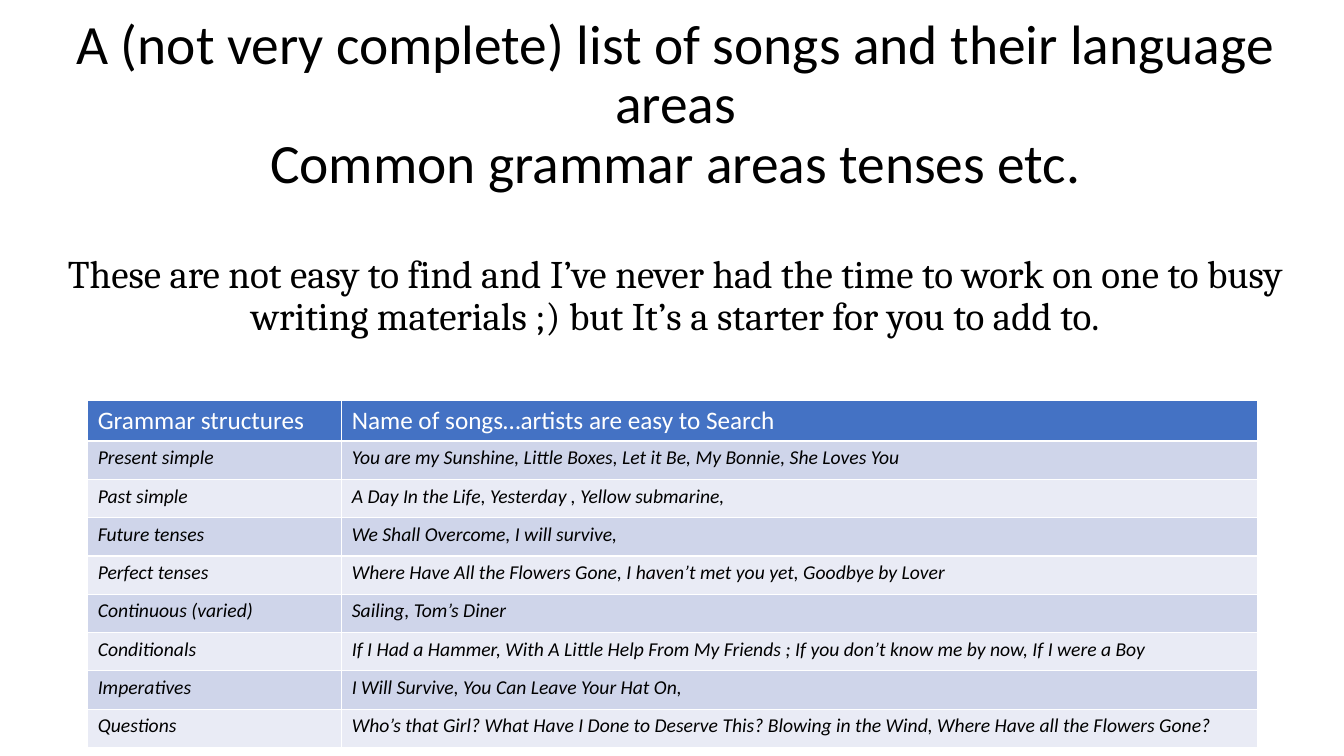
import dataclasses

import pptx
import pptx.dml.color
import pptx.enum.text
import pptx.presentation
import pptx.slide
import pptx.table
import pptx.text.text
import pptx.util

Inches = pptx.util.Inches
Color = pptx.dml.color.RGBColor


@dataclasses.dataclass(frozen=True)
class TextStyle:
    font: str
    size: float
    color: Color
    italic: bool = False


@dataclasses.dataclass(frozen=True)
class Theme:
    heading: TextStyle = TextStyle("Calibri", 39.6, Color(0, 0, 0))
    remark: TextStyle = TextStyle("Cambria", 27.9, Color(0, 0, 0))
    header: TextStyle = TextStyle("Calibri", 18, Color(255, 255, 255))
    entry: TextStyle = TextStyle("Calibri", 14, Color(0, 0, 0), italic=True)
    header_fill: Color = Color(0x44, 0x72, 0xC4)
    bands: tuple[Color, Color] = (Color(0xCF, 0xD5, 0xEA), Color(0xE9, 0xEB, 0xF5))


@dataclasses.dataclass(frozen=True)
class SongRow:
    structure: str
    songs: str


THEME = Theme()
HEADING = (
    "A (not very complete) list of songs and their language areas\v"
    "Common grammar areas tenses etc."
)
REMARK = (
    "These are not easy to find and I’ve never had the time to work on one "
    "to busy writing materials ;) but It’s a starter for you to add to."
)
COLUMN_WIDTHS = (2.52, 9.08)
ROW_HEIGHT = 0.38
SONG_ROWS = (
    SongRow("Grammar structures", "Name of songs…artists are easy to Search"),
    SongRow(
        "Present simple",
        "You are my Sunshine, Little Boxes, Let it Be, My Bonnie, She Loves You",
    ),
    SongRow("Past simple", "A Day In the Life, Yesterday , Yellow submarine,"),
    SongRow("Future tenses", "We Shall Overcome, I will survive,"),
    SongRow(
        "Perfect tenses",
        "Where Have All the Flowers Gone, I haven’t met you yet, Goodbye by Lover",
    ),
    SongRow("Continuous (varied)", "Sailing, Tom’s Diner"),
    SongRow(
        "Conditionals",
        "If I Had a Hammer, With A Little Help From My Friends ; "
        "If you don’t know me by now, If I were a Boy",
    ),
    SongRow("Imperatives", "I Will Survive, You Can Leave Your Hat On,"),
    SongRow(
        "Questions",
        "Who’s that Girl? What Have I Done to Deserve This? "
        "Blowing in the Wind, Where Have all the Flowers Gone?",
    ),
)


def apply_style(paragraph: pptx.text.text._Paragraph, style: TextStyle) -> None:
    """Set the font of a whole paragraph."""
    paragraph.font.name = style.font
    paragraph.font.size = pptx.util.Pt(style.size)
    paragraph.font.color.rgb = style.color
    paragraph.font.italic = style.italic
    paragraph.font.bold = False


def write_title(slide: pptx.slide.Slide) -> None:
    """Place the heading and the remark in the title placeholder."""
    title = slide.shapes.title
    title.left, title.top = Inches(0.07), Inches(0.11)
    title.width, title.height = Inches(13.26), Inches(1.45)
    frame = title.text_frame
    frame.word_wrap = True
    frame.auto_size = pptx.enum.text.MSO_AUTO_SIZE.NONE
    frame.vertical_anchor = pptx.enum.text.MSO_ANCHOR.TOP
    heading, remark = frame.paragraphs[0], frame.add_paragraph()
    heading.text, remark.text = HEADING, REMARK
    remark.space_before = pptx.util.Pt(42)
    for paragraph, style in ((heading, THEME.heading), (remark, THEME.remark)):
        paragraph.alignment = pptx.enum.text.PP_ALIGN.CENTER
        paragraph.line_spacing = 0.9
        apply_style(paragraph, style)


def fill_cell(cell: pptx.table._Cell, text: str, style: TextStyle, fill: Color) -> None:
    """Write one table cell on a plain background."""
    cell.text = text
    cell.fill.solid()
    cell.fill.fore_color.rgb = fill
    apply_style(cell.text_frame.paragraphs[0], style)


def add_song_table(slide: pptx.slide.Slide) -> None:
    """Draw the table of grammar structures and songs."""
    songs = slide.shapes.add_table(
        len(SONG_ROWS), len(COLUMN_WIDTHS), Inches(0.87), Inches(3.97),
        Inches(sum(COLUMN_WIDTHS)), Inches(ROW_HEIGHT * len(SONG_ROWS)),
    ).table
    for column, width in zip(songs.columns, COLUMN_WIDTHS):
        column.width = Inches(width)
    for index, (row, entry) in enumerate(zip(songs.rows, SONG_ROWS)):
        row.height = Inches(ROW_HEIGHT)
        style = THEME.entry if index else THEME.header
        fill = THEME.bands[(index - 1) % 2] if index else THEME.header_fill
        for cell, text in zip(row.cells, (entry.structure, entry.songs)):
            fill_cell(cell, text, style, fill)


def main() -> None:
    """Build the slide and save it."""
    deck = pptx.Presentation()
    deck.slide_width, deck.slide_height = Inches(13.33), Inches(7.5)
    slide = deck.slides.add_slide(deck.slide_layouts[5])
    write_title(slide)
    add_song_table(slide)
    deck.save("out.pptx")


if __name__ == "__main__":
    main()
